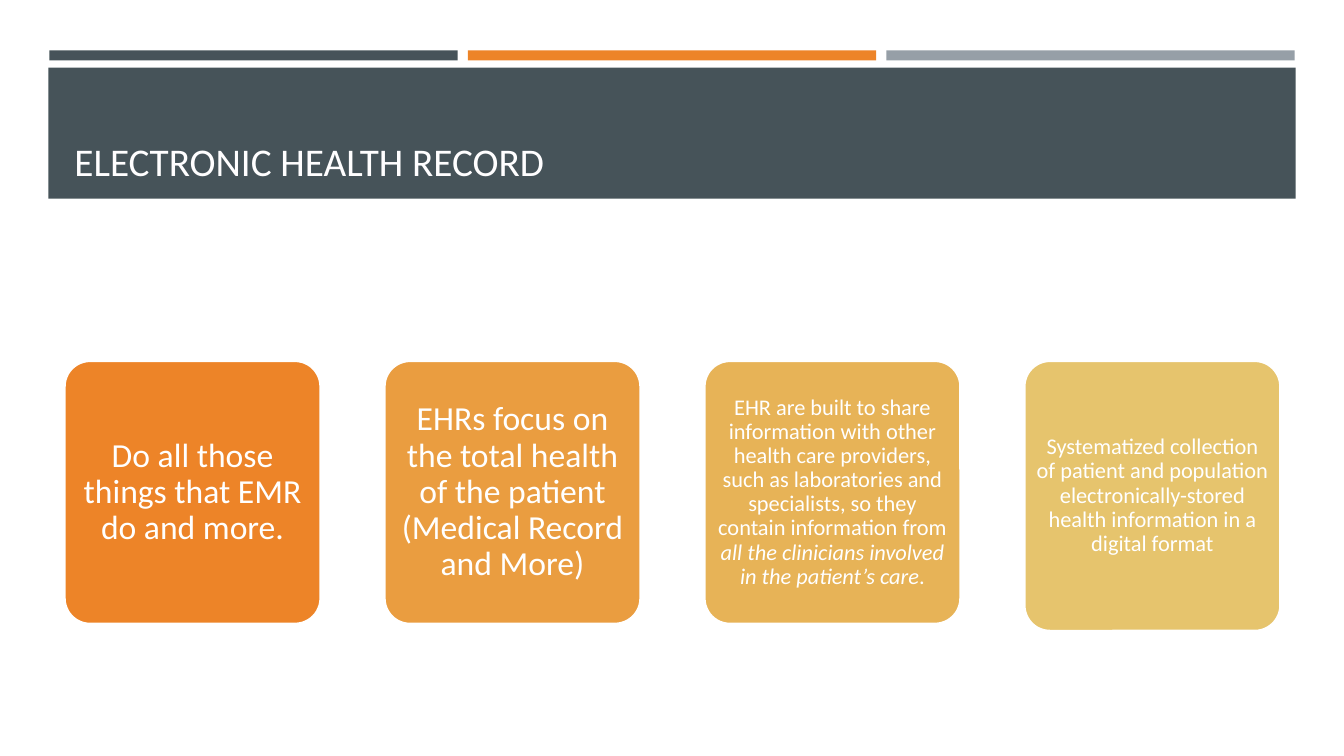
from pptx import Presentation
from pptx.dml.color import RGBColor
from pptx.enum import shapes, text
from pptx.util import Inches, Pt

FONT = "Calibri"
WHITE = RGBColor(0xFF, 0xFF, 0xFF)
TITLE_WHITE = RGBColor(0xFF, 0xFE, 0xFF)
SLATE = RGBColor(0x46, 0x53, 0x59)
ORANGE = RGBColor(0xED, 0x84, 0x28)
GREY = RGBColor(0x96, 0x9F, 0xA7)
AMBER = RGBColor(0xEA, 0x9D, 0x40)
GOLD = RGBColor(0xE7, 0xB3, 0x57)
SAND = RGBColor(0xE6, 0xC4, 0x6D)

STRIPES = [SLATE, ORANGE, GREY]
STRIPE_LEFT, STRIPE_STEP = 0.49, 4.15
CARD_LEFT, CARD_RIGHT = 0.64, 10.16

# Each card: fill, height, text size, side inset, top inset, runs of (text, italic)
CARDS = [
    (ORANGE, 2.61, 24, 0.05, 0.03,
     [("Do all those things that EMR do and more.", False)]),
    (AMBER, 2.61, 24, 0.05, 0.03,
     [("EHRs focus on the total health of the patient (Medical Record and More)", False)]),
    (GOLD, 2.61, 16, 0.03, 0.02,
     [("EHR are built to share information with other health care providers, such as "
       "laboratories and specialists, so they contain information from ", False),
      ("all the clinicians involved in the patient’s care", True),
      (".", False)]),
    (SAND, 2.68, 16, 0.03, 0.02,
     [("Systematized collection of patient and population electronically-stored "
       "health information in a digital format", False)]),
]


def add_block(s, kind, left, top, width, height, fill):
    sp = s.shapes.add_shape(kind, Inches(left), Inches(top), Inches(width), Inches(height))
    sp.shadow.inherit = False
    sp.fill.solid()
    sp.fill.fore_color.rgb = fill
    sp.line.fill.background()
    return sp


def add_run(p, words, size, color, italic=False):
    r = p.add_run()
    r.text = words
    r.font.name = FONT
    r.font.size = Pt(size)
    r.font.color.rgb = color
    r.font.italic = italic


def add_title(s, words):
    sp = s.shapes.add_textbox(Inches(0.64), Inches(0.77), Inches(12.06), Inches(1.11))
    tf = sp.text_frame
    tf.word_wrap = True
    tf.vertical_anchor = text.MSO_ANCHOR.BOTTOM
    add_run(tf.paragraphs[0], words, 28, TITLE_WHITE)


def add_card(s, left, fill, height, size, side, top, runs):
    sp = add_block(s, shapes.MSO_SHAPE.ROUNDED_RECTANGLE, left, 3.58, 2.54, height, fill)
    sp.adjustments[0] = 0.1
    sp.line.color.rgb = WHITE
    sp.line.width = Pt(1.75)
    tf = sp.text_frame
    tf.word_wrap = True
    tf.vertical_anchor = text.MSO_ANCHOR.MIDDLE
    tf.margin_left = tf.margin_right = Inches(side)
    tf.margin_top = tf.margin_bottom = Inches(top)
    p = tf.paragraphs[0]
    p.alignment = text.PP_ALIGN.CENTER
    p.line_spacing = 0.9
    for words, italic in runs:
        add_run(p, words, size, WHITE, italic)


def main():
    prs = Presentation()
    prs.slide_width, prs.slide_height = Inches(13.33), Inches(7.5)
    s = prs.slides.add_slide(prs.slide_layouts[6])

    # Header stripes and title band
    rect = shapes.MSO_SHAPE.RECTANGLE
    for i, color in enumerate(STRIPES):
        add_block(s, rect, STRIPE_LEFT + i * STRIPE_STEP, 0.5, 4.05, 0.1, color)
    add_block(s, rect, 0.48, 0.67, 12.37, 1.3, SLATE)
    add_title(s, "ELECTRONIC HEALTH RECORD")

    # Row of evenly spaced cards
    step = (CARD_RIGHT - CARD_LEFT) / (len(CARDS) - 1)
    for i, card in enumerate(CARDS):
        add_card(s, CARD_LEFT + i * step, *card)

    prs.save("out.pptx")


if __name__ == "__main__":
    main()
